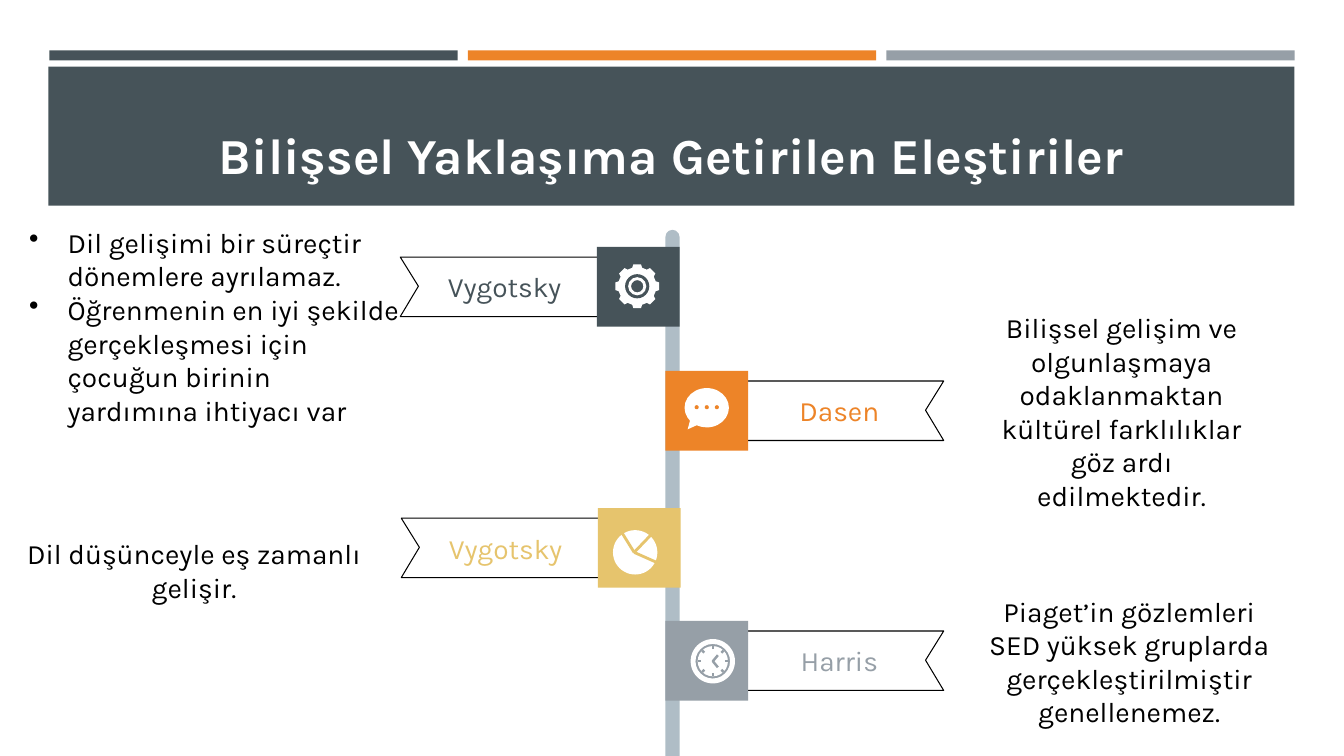
import math

import lxml.etree
import pptx
import pptx.dml.color
import pptx.enum.shapes
import pptx.enum.text
import pptx.oxml.ns
import pptx.util

Inches = pptx.util.Inches
SHAPES = pptx.enum.shapes.MSO_SHAPE
ALIGN = pptx.enum.text.PP_ALIGN
ANCHOR = pptx.enum.text.MSO_ANCHOR
SLATE, ORANGE, GREY, GOLD = "465359", "ED8428", "969FA7", "E6C46D"
POLE, WHITE, BLACK = "AFBDC6", "FFFFFF", "000000"


def color(value):
    """Turn a hex string into a colour."""
    return pptx.dml.color.RGBColor.from_string(value)


def apply(target, values):
    """Set every attribute named in a dict of format values."""
    for name, value in values.items():
        setattr(target, name, value)


def paint(shape, fill=None, line=None, width=0.75):
    """Give a shape its fill and line, without a shadow."""
    shape.shadow.inherit = False
    if fill:
        shape.fill.solid()
        shape.fill.fore_color.rgb = color(fill)
    else:
        shape.fill.background()
    if line:
        shape.line.color.rgb = color(line)
        shape.line.width = pptx.util.Pt(width)
    else:
        shape.line.fill.background()
    return shape


def add_preset(slide, kind, box, fill, adjustments=()):
    """Add a filled preset shape."""
    shape = slide.shapes.add_shape(kind, *map(Inches, box))
    for index, value in enumerate(adjustments):
        shape.adjustments[index] = value
    return paint(shape, fill)


def add_disc(slide, x, y, radius, fill, kind=SHAPES.OVAL, adjustments=()):
    """Add a round shape around a centre."""
    box = (x - radius, y - radius, 2 * radius, 2 * radius)
    return add_preset(slide, kind, box, fill, adjustments)


def add_outline(slide, points, close=True, **style):
    """Add a freeform through points given in inches."""
    corners = [(Inches(x), Inches(y)) for x, y in points]
    builder = slide.shapes.build_freeform(*corners[0])
    builder.add_line_segments(corners[1:], close=close)
    return paint(builder.convert_to_shape(), **style)


def add_line(slide, start, end, stroke, width):
    """Add a straight line without a shadow."""
    line = slide.shapes.add_connector(
        pptx.enum.shapes.MSO_CONNECTOR.STRAIGHT, *map(Inches, start + end))
    line.line.color.rgb = color(stroke)
    line.line.width = pptx.util.Pt(width)
    lxml.etree.SubElement(line._element.spPr, pptx.oxml.ns.qn("a:effectLst"))


def write(shape, paragraphs, fill, size=20, bold=False, bullets=False,
          anchor=ANCHOR.MIDDLE, inset=0.13):
    """Write paragraphs into a shape, centred or bulleted."""
    frame = shape.text_frame
    sides = ("left", "right", "top", "bottom")
    apply(frame, {"word_wrap": True, "vertical_anchor": anchor}
          | {f"margin_{side}": Inches(inset) for side in sides})
    for index, text in enumerate(paragraphs):
        paragraph = frame.add_paragraph() if index else frame.paragraphs[0]
        paragraph.alignment = ALIGN.LEFT if bullets else ALIGN.CENTER
        if bullets:
            properties = paragraph._p.get_or_add_pPr()
            properties.set("marL", str(Inches(0.38)))
            properties.set("indent", str(-Inches(0.38)))
            bullet = lxml.etree.SubElement(properties, pptx.oxml.ns.qn("a:buChar"))
            bullet.set("char", "•")
        run = paragraph.add_run()
        run.text = text
        apply(run.font, {"name": "Karla", "size": pptx.util.Pt(size), "bold": bold})
        run.font.color.rgb = color(fill)


def add_text(slide, box, paragraphs, fill=BLACK, **style):
    """Add a text box."""
    write(slide.shapes.add_textbox(*map(Inches, box)), paragraphs, fill, **style)


def polar(x, y, radius, degrees):
    """Find the point at an angle around a centre."""
    angle = math.radians(degrees)
    return x + radius * math.cos(angle), y + radius * math.sin(angle)


def add_header(slide):
    """Add the three stripes and the title band."""
    for index, fill in enumerate((SLATE, ORANGE, GREY)):
        add_preset(slide, SHAPES.RECTANGLE, (0.49 + 4.15 * index, 0.5, 4.05, 0.1), fill)
    add_preset(slide, SHAPES.RECTANGLE, (0.48, 0.66, 12.36, 1.38), SLATE)
    add_text(slide, (0.63, 0.8, 12.06, 1.08), ["Bilişsel Yaklaşıma Getirilen Eleştiriler"],
             WHITE, size=36, bold=True, anchor=ANCHOR.BOTTOM, inset=0.05)


def add_branch(slide, left, top, side, name, fill):
    """Add a named ribbon and its square; side is 1 for right, -1 for left."""
    root = left + (0.69 if side > 0 else 0.12)
    tip = root + 2.07 * side
    upper, lower = top + 0.1, top + 0.69
    ribbon = add_outline(slide, [(root, lower), (tip, lower), (tip - 0.18 * side, top + 0.39),
                                 (tip, upper), (root, upper)], line=BLACK)
    write(ribbon, [name], fill)
    add_preset(slide, SHAPES.RECTANGLE, (left, top, 0.82, 0.79), fill)


def add_gear(slide, x, y):
    """Add the gear icon."""
    profile = ((-15, 0.19), (-10, 0.22), (10, 0.22), (15, 0.19))
    teeth = [polar(x, y, radius, 45 * tooth + turn)
             for tooth in range(8) for turn, radius in profile]
    add_outline(slide, teeth, fill=WHITE)
    add_disc(slide, x, y, 0.12, SLATE)
    add_disc(slide, x, y, 0.09, WHITE, SHAPES.DONUT, [0.16])


def add_bubble(slide, x, y):
    """Add the speech bubble icon."""
    add_preset(slide, SHAPES.OVAL_CALLOUT, (x - 0.22, y - 0.19, 0.44, 0.39), WHITE, [-0.43, 0.55])
    for step in (-1, 0, 1):
        add_disc(slide, x + 0.1 * step, y, 0.02, ORANGE)


def add_pie(slide, x, y):
    """Add the pie icon with its three cuts."""
    add_disc(slide, x, y, 0.22, WHITE)
    for degrees in (-124, -48, 25):
        add_line(slide, (x - 0.01, y), polar(x, y, 0.23, degrees), GOLD, 2)


def add_clock(slide, x, y):
    """Add the clock icon."""
    add_disc(slide, x, y, 0.22, WHITE, SHAPES.DONUT, [0.11])
    add_disc(slide, x, y, 0.15, WHITE)
    for degrees in range(0, 360, 45):
        add_line(slide, polar(x, y, 0.12, degrees), polar(x, y, 0.15, degrees), GREY, 1.75)
    hands = [(x + 0.05, y - 0.06), (x, y), (x + 0.05, y + 0.06)]
    add_outline(slide, hands, close=False, line=GREY, width=1.75)


def main():
    """Build the slide and save it."""
    presentation = pptx.Presentation()
    apply(presentation, {"slide_width": Inches(13.33), "slide_height": Inches(7.5)})
    slide = presentation.slides.add_slide(presentation.slide_layouts[6])
    add_header(slide)
    add_preset(slide, SHAPES.ROUND_2_SAME_RECTANGLE, (6.6, 2.28, 0.14, 5.22), POLE, [0.5, 0])
    for branch in (
        (6.6, 6.16, 1, "Harris", GREY),
        (6.6, 3.68, 1, "Dasen", ORANGE),
        (5.93, 5.04, -1, "Vygotsky", GOLD),
        (5.92, 2.45, -1, "Vygotsky", SLATE),
    ):
        add_branch(slide, *branch)
    add_text(slide, (9.66, 6.17, 3.08, 0.78),
             ["Piaget’in gözlemleri SED yüksek gruplarda gerçekleştirilmiştir genellenemez."])
    add_text(slide, (9.66, 3.69, 2.93, 0.78),
             ["Bilişsel gelişim ve olgunlaşmaya odaklanmaktan kültürel farklılıklar "
              "göz ardı edilmektedir."])
    add_text(slide, (0.09, 5.27, 3.67, 0.78), ["Dil düşünceyle eş zamanlı gelişir."])
    add_text(slide, (0.16, 2.2, 3.99, 2.07),
             ["Dil gelişimi bir süreçtir dönemlere ayrılamaz.",
              "Öğrenmenin en iyi şekilde gerçekleşmesi için çocuğun birinin yardımına ihtiyacı var"],
             bullets=True)
    add_gear(slide, 6.32, 2.84)
    add_pie(slide, 6.3, 5.48)
    add_bubble(slide, 7.01, 4.04)
    add_clock(slide, 7.07, 6.56)
    presentation.save("out.pptx")


if __name__ == "__main__":
    main()
